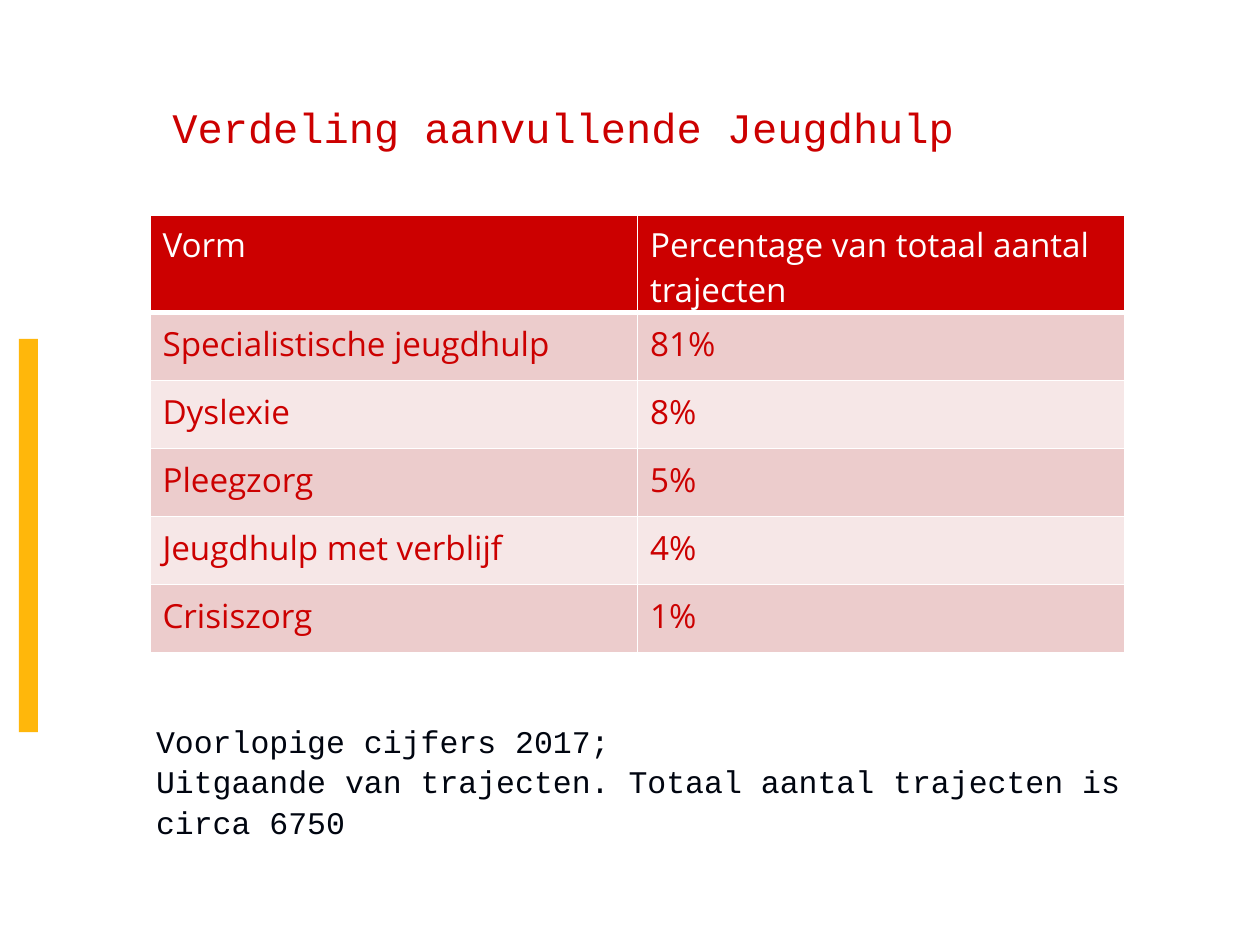
from dataclasses import dataclass

from lxml.etree import SubElement
from pptx import Presentation
from pptx.dml.color import RGBColor as Rgb
from pptx.enum.shapes import MSO_SHAPE as Shape
from pptx.enum.text import MSO_AUTO_SIZE as AutoSize
from pptx.oxml.ns import qn
from pptx.util import Inches, Pt


@dataclass(frozen=True)
class Theme:
    red: str = "CC0000"
    yellow: str = "FFB70B"
    ink: str = "000510"
    white: str = "FFFFFF"
    bands: tuple = ("ECCCCC", "F6E7E7")
    mono: str = "Courier New"
    sans: str = "Open Sans"
    title_size: int = 24
    table_size: int = 19
    note_size: int = 18


@dataclass(frozen=True)
class Box:
    left: float
    top: float
    width: float
    height: float

    def emu(self) -> tuple:
        return tuple(map(Inches, (self.left, self.top, self.width, self.height)))


@dataclass(frozen=True)
class TextBlock:
    box: Box
    lines: tuple
    size: int
    color: str
    top_inset: float


@dataclass(frozen=True)
class CellStyle:
    fill: str
    color: str
    top_inset: float
    bottom_inset: float
    bottom_border: float


THEME = Theme()
LINE_SPACING = 1.07
BAR = Box(0.15, 2.69, 0.15, 3.12)
TABLE = Box(1.19, 1.71, 7.74, 3.47)
HEADER_HEIGHT, ROW_HEIGHT = 0.77, 0.54

TEXT_BLOCKS = (
    TextBlock(Box(1.27, 0.69, 7.4, 0.5), ("Verdeling aanvullende Jeugdhulp",),
              THEME.title_size, THEME.red, 0.09),
    TextBlock(Box(1.14, 5.63, 8.67, 0.71),
              ("Voorlopige cijfers 2017;",
               "Uitgaande van trajecten. Totaal aantal trajecten is circa 6750"),
              THEME.note_size, THEME.ink, 0.08),
)

CARE_SHARES = (
    ("Vorm", "Percentage van totaal aantal trajecten"),
    ("Specialistische jeugdhulp", "81%"),
    ("Dyslexie", "8%"),
    ("Pleegzorg", "5%"),
    ("Jeugdhulp met verblijf", "4%"),
    ("Crisiszorg", "1%"),
)

HEADER_STYLE = CellStyle(THEME.red, THEME.white, 0.05, 0, 3)
BODY_STYLES = tuple(CellStyle(band, THEME.red, 0.07, 0.07, 1) for band in THEME.bands)


def set_font(paragraph, name: str, size: int, color: str) -> None:
    for run in paragraph.runs:
        for key, value in {"name": name, "size": Pt(size), "bold": False}.items():
            setattr(run.font, key, value)
        run.font.color.rgb = Rgb.from_string(color)


def add_bar(slide, box: Box) -> None:
    bar = slide.shapes.add_shape(Shape.RECTANGLE, *box.emu())
    bar.shadow.inherit = False
    bar.fill.solid()
    bar.fill.fore_color.rgb = Rgb.from_string(THEME.yellow)
    bar.line.fill.background()


def add_text(slide, block: TextBlock) -> None:
    frame = slide.shapes.add_textbox(*block.box.emu()).text_frame
    frame_format = {"word_wrap": True, "auto_size": AutoSize.NONE,
                    "margin_top": Inches(block.top_inset)}
    for key, value in frame_format.items():
        setattr(frame, key, value)
    frame.text = "\n".join(block.lines)
    for paragraph in frame.paragraphs:
        paragraph.line_spacing = LINE_SPACING
        set_font(paragraph, THEME.mono, block.size, block.color)


def add_borders(cell, bottom: float) -> None:
    """Draw white cell borders; call before the fill, which must follow them."""
    properties = cell._tc.get_or_add_tcPr()
    for side, width in {"L": 1, "R": 1, "T": 1, "B": bottom}.items():
        line = SubElement(properties, qn(f"a:ln{side}"), w=str(Pt(width)))
        SubElement(SubElement(line, qn("a:solidFill")), qn("a:srgbClr"), val=THEME.white)


def fill_cell(cell, text: str, style: CellStyle) -> None:
    cell.text = text
    margins = {"margin_left": 0.1, "margin_right": 0.1,
               "margin_top": style.top_inset, "margin_bottom": style.bottom_inset}
    for key, value in margins.items():
        setattr(cell, key, Inches(value))
    add_borders(cell, style.bottom_border)
    cell.fill.solid()
    cell.fill.fore_color.rgb = Rgb.from_string(style.fill)
    set_font(cell.text_frame.paragraphs[0], THEME.sans, THEME.table_size, style.color)


def add_share_table(slide, box: Box, rows: tuple) -> None:
    table = slide.shapes.add_table(len(rows), len(rows[0]), *box.emu()).table
    table.horz_banding = False
    for column in table.columns:
        column.width = Inches(box.width / len(rows[0]))
    for row_index, texts in enumerate(rows):
        is_header = row_index == 0
        table.rows[row_index].height = Inches(HEADER_HEIGHT if is_header else ROW_HEIGHT)
        style = HEADER_STYLE if is_header else BODY_STYLES[(row_index - 1) % 2]
        for column_index, text in enumerate(texts):
            fill_cell(table.cell(row_index, column_index), text, style)


def main() -> None:
    deck = Presentation()
    deck.slide_width, deck.slide_height = Inches(10), Inches(7.5)
    slide = deck.slides.add_slide(deck.slide_layouts[6])
    slide.background.fill.solid()
    slide.background.fill.fore_color.rgb = Rgb.from_string(THEME.white)
    add_bar(slide, BAR)
    title, note = TEXT_BLOCKS
    add_text(slide, title)
    add_share_table(slide, TABLE, CARE_SHARES)
    add_text(slide, note)
    deck.save("out.pptx")


if __name__ == "__main__":
    main()
